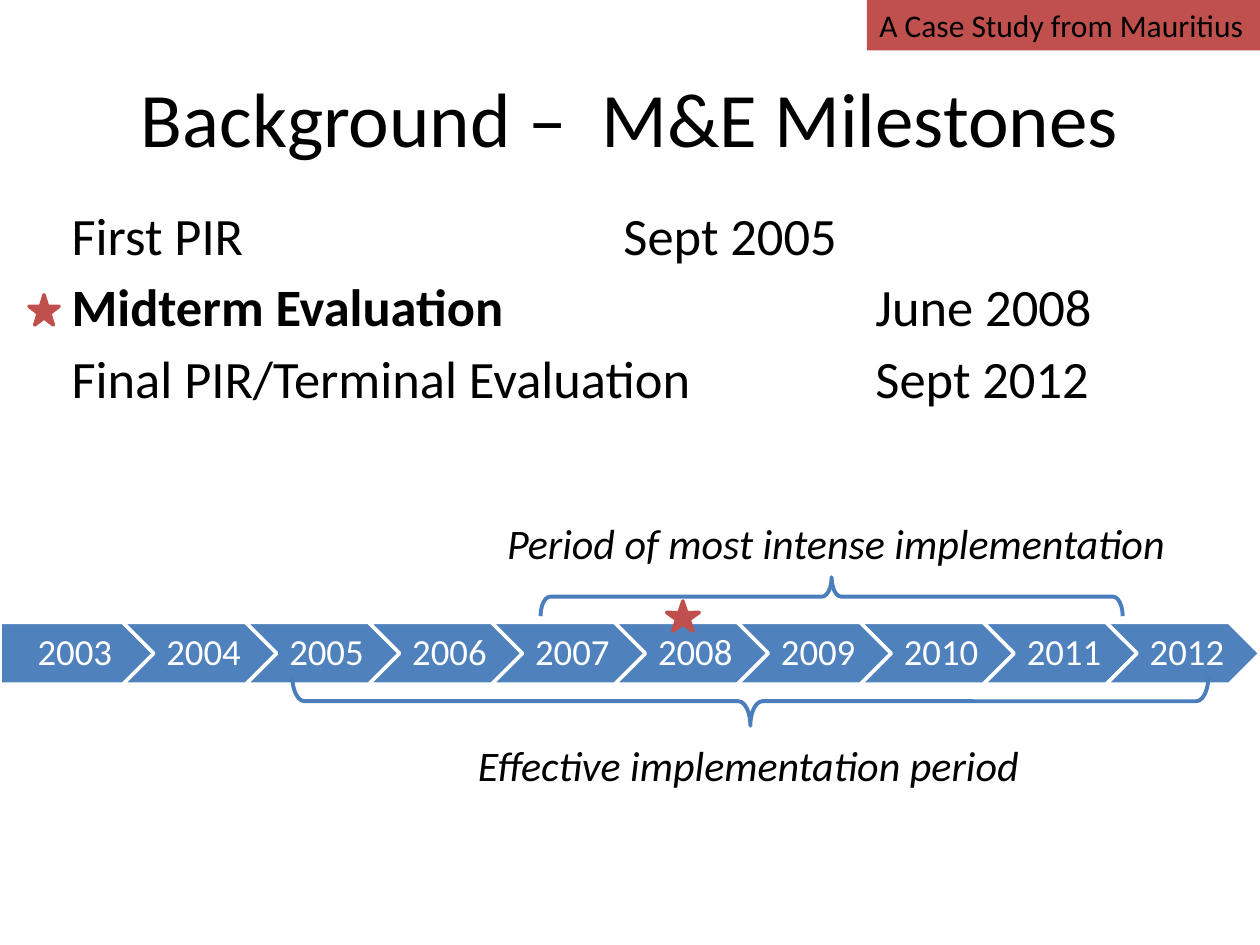
from pptx import Presentation
from pptx.dml.color import RGBColor
from pptx.enum.shapes import MSO_SHAPE as Shape
from pptx.enum.text import MSO_ANCHOR as Anchor, PP_ALIGN as Align
from pptx.util import Inches, Pt

FONT = "Calibri"
BLACK = RGBColor(0x00, 0x00, 0x00)
WHITE = RGBColor(0xFF, 0xFF, 0xFF)
BLUE = RGBColor(0x4F, 0x81, 0xBD)
BRACE_BLUE = RGBColor(0x4B, 0x7E, 0xBC)
RED = RGBColor(0xC0, 0x50, 0x4D)

# Content
TITLE = "Background –  M&E Milestones"
TAG = "A Case Study from Mauritius"
MILESTONES = [  # name, tabs to the date, date, bold name
    ("First PIR", 4, "Sept 2005", False),
    ("Midterm Evaluation", 3, "June 2008", True),
    ("Final PIR/Terminal Evaluation", 2, "Sept 2012", False),
]
YEARS = range(2003, 2013)
PERIODS = [  # label, label box, brace box as seen, brace rotation
    ("Effective implementation period",
     (3.67, 5.82, 4.54, 0.5), (2.32, 5.37, 7.27, 0.39), 90),
    ("Period of most intense implementation",
     (3.82, 4.06, 5.63, 0.5), (4.29, 4.58, 4.62, 0.31), 270),
]
STARS = [(5.29, 4.77, 0.26, 0.24), (0.23, 2.34, 0.24, 0.24)]

# Timeline
ARROW_TOP, ARROW_WIDTH, ARROW_HEIGHT = 4.94, 1.22, 0.49
ARROW_STEP = (10 - ARROW_WIDTH) / (len(YEARS) - 1)

presentation = Presentation()
presentation.slide_width = Inches(10)
presentation.slide_height = Inches(7.5)
slide = presentation.slides.add_slide(presentation.slide_layouts[5])


def inches(box):
    return [Inches(value) for value in box]


def style(paragraph, size, color=BLACK, align=Align.CENTER, italic=None):
    paragraph.alignment = align
    font = paragraph.font
    font.name, font.size, font.italic = FONT, Pt(size), italic
    font.color.rgb = color


def add_shape(kind, box, fill=None, line=None, line_width=2):
    shape = slide.shapes.add_shape(kind, *inches(box))
    shape.shadow.inherit = False
    if fill is None:
        shape.fill.background()
    else:
        shape.fill.solid()
        shape.fill.fore_color.rgb = fill
    if line is None:
        shape.line.fill.background()
    else:
        shape.line.color.rgb = line
        shape.line.width = Pt(line_width)
    return shape


def add_text_box(box):
    frame = slide.shapes.add_textbox(*inches(box)).text_frame
    frame.word_wrap = True
    return frame


# Title
title = slide.shapes.title
title.left, title.top, title.width, title.height = inches((0.5, 0.3, 9, 1.25))
title.text_frame.text = TITLE
title.text_frame.vertical_anchor = Anchor.MIDDLE
style(title.text_frame.paragraphs[0], 44)

# Milestones, with dates on one-inch tab stops
frame = add_text_box((0.47, 1.56, 9.06, 3.2))
for index, (name, tabs, date, bold) in enumerate(MILESTONES):
    paragraph = frame.paragraphs[0] if index == 0 else frame.add_paragraph()
    style(paragraph, 30, align=Align.LEFT)
    paragraph.space_before = Pt(5)
    properties = paragraph._p.get_or_add_pPr()
    properties.set("marL", str(Inches(0.38)))
    properties.set("indent", str(-Inches(0.38)))
    properties.set("defTabSz", str(Inches(1)))
    name_run = paragraph.add_run()
    name_run.text = name
    name_run.font.bold = bold
    paragraph.add_run().text = "\t" * tabs + date

# Year arrows
for index, year in enumerate(YEARS):
    kind = Shape.CHEVRON if index else Shape.PENTAGON
    box = (index * ARROW_STEP, ARROW_TOP, ARROW_WIDTH, ARROW_HEIGHT)
    arrow = add_shape(kind, box, BLUE, WHITE)
    frame = arrow.text_frame
    frame.text = str(year)
    frame.vertical_anchor = Anchor.MIDDLE
    frame.margin_left = Inches(0.09 if index else 0.12)
    frame.margin_right = Inches(0.03)
    frame.margin_top = frame.margin_bottom = Inches(0.06)
    style(frame.paragraphs[0], 21, WHITE)
    frame.paragraphs[0].line_spacing = 0.9

# Periods: a right brace is drawn upright and then turned about its centre
for label, label_box, (left, top, width, height), rotation in PERIODS:
    shift = (width - height) / 2
    brace = add_shape(Shape.RIGHT_BRACE,
                      (left + shift, top - shift, height, width),
                      line=BRACE_BLUE, line_width=2.25)
    brace.adjustments[0] = 0.245
    brace.rotation = rotation
    frame = add_text_box(label_box)
    frame.text = label
    style(frame.paragraphs[0], 24, italic=True)

# Midterm stars
for box in STARS:
    add_shape(Shape.STAR_5_POINT, box, RED, RED)

# Corner tag
tag = add_shape(Shape.RECTANGLE, (6.88, 0, 3.12, 0.4), RED)
tag.text_frame.text = TAG
tag.text_frame.word_wrap = False
tag.text_frame.vertical_anchor = Anchor.TOP
style(tag.text_frame.paragraphs[0], 18, align=Align.LEFT)

presentation.save("out.pptx")
